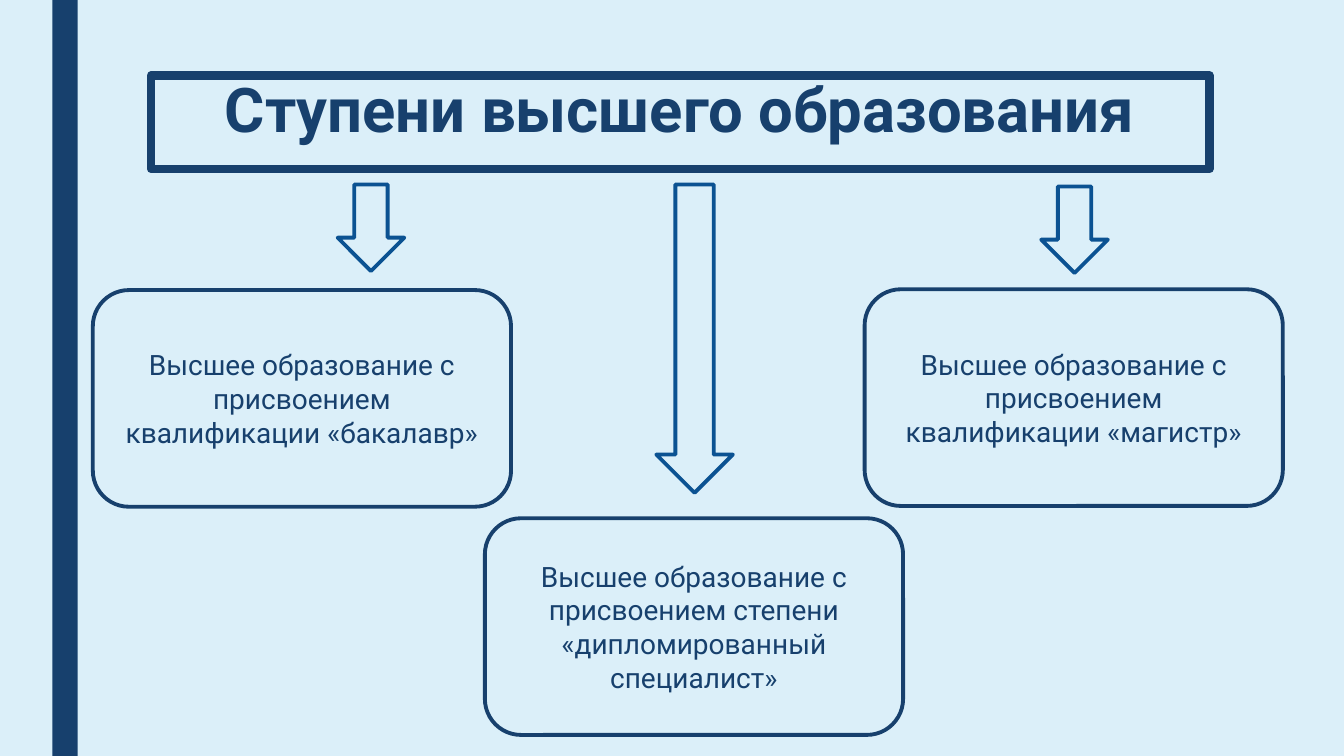
from pptx import Presentation
from pptx.dml.color import RGBColor
from pptx.enum.shapes import MSO_SHAPE
from pptx.enum.text import MSO_ANCHOR, PP_ALIGN
from pptx.util import Cm, Pt

COLORS = {"background": "DBEFF9", "navy": "17406D", "blue": "0B5292"}
BOX_SIZE = (10.54, 5.46)
SHORT_ARROW = (1.68, 2.18)
LONG_ARROW = (1.93, 7.77)


def add_figure(kind, place, fill, line=None, width=0):
    """Add a preset shape; place is left, top, width, height in cm."""
    figure = page.shapes.add_shape(kind, *(Cm(length) for length in place))
    figure.shadow.inherit = False
    figure.fill.solid()
    figure.fill.fore_color.rgb = RGBColor.from_string(COLORS[fill])
    if line:
        figure.line.color.rgb = RGBColor.from_string(COLORS[line])
        figure.line.width = Pt(width)
    else:
        figure.line.fill.background()
    return figure


def write_text(box, text, anchor, **font_format):
    frame = box.text_frame
    frame.word_wrap = True
    frame.vertical_anchor = anchor
    para = frame.paragraphs[0]
    para.alignment = PP_ALIGN.CENTER
    span = para.add_run()
    span.text = text
    span.font.color.rgb = RGBColor.from_string(COLORS["navy"])
    for name, value in {"name": "Roboto", **font_format}.items():
        setattr(span.font, name, value)
    return para


deck = Presentation()
deck.slide_width, deck.slide_height = Cm(33.87), Cm(19.05)
page = deck.slides.add_slide(deck.slide_layouts[6])
page.background.fill.solid()
page.background.fill.fore_color.rgb = RGBColor.from_string(COLORS["background"])

add_figure(MSO_SHAPE.RECTANGLE, (1.32, 0, 0.64, 19.05), "navy")

title = add_figure(MSO_SHAPE.RECTANGLE, (3.81, 1.9, 26.67, 2.36), "background", "navy", 6)
title.fill.background()
heading = write_text(title, "Ступени высшего образования", MSO_ANCHOR.TOP, size=Pt(44), bold=True)
heading.line_spacing = 0.89

degrees = [
    (2.34, 7.31, "присвоением квалификации «бакалавр»"),
    (21.79, 7.29, "присвоением квалификации «магистр»"),
    (12.22, 13.06, "присвоением степени «дипломированный специалист»"),
]
for left, top, degree in degrees:
    box = add_figure(MSO_SHAPE.ROUNDED_RECTANGLE, (left, top, *BOX_SIZE), "background", "navy", 2.75)
    write_text(box, f"Высшее образование с {degree}", MSO_ANCHOR.MIDDLE, size=Pt(20))

arrows = [(8.51, 4.65, SHORT_ARROW), (16.54, 4.65, LONG_ARROW), (26.24, 4.7, SHORT_ARROW)]
for left, top, size in arrows:
    add_figure(MSO_SHAPE.DOWN_ARROW, (left, top, *size), "background", "blue", 2.75)

deck.save("out.pptx")
